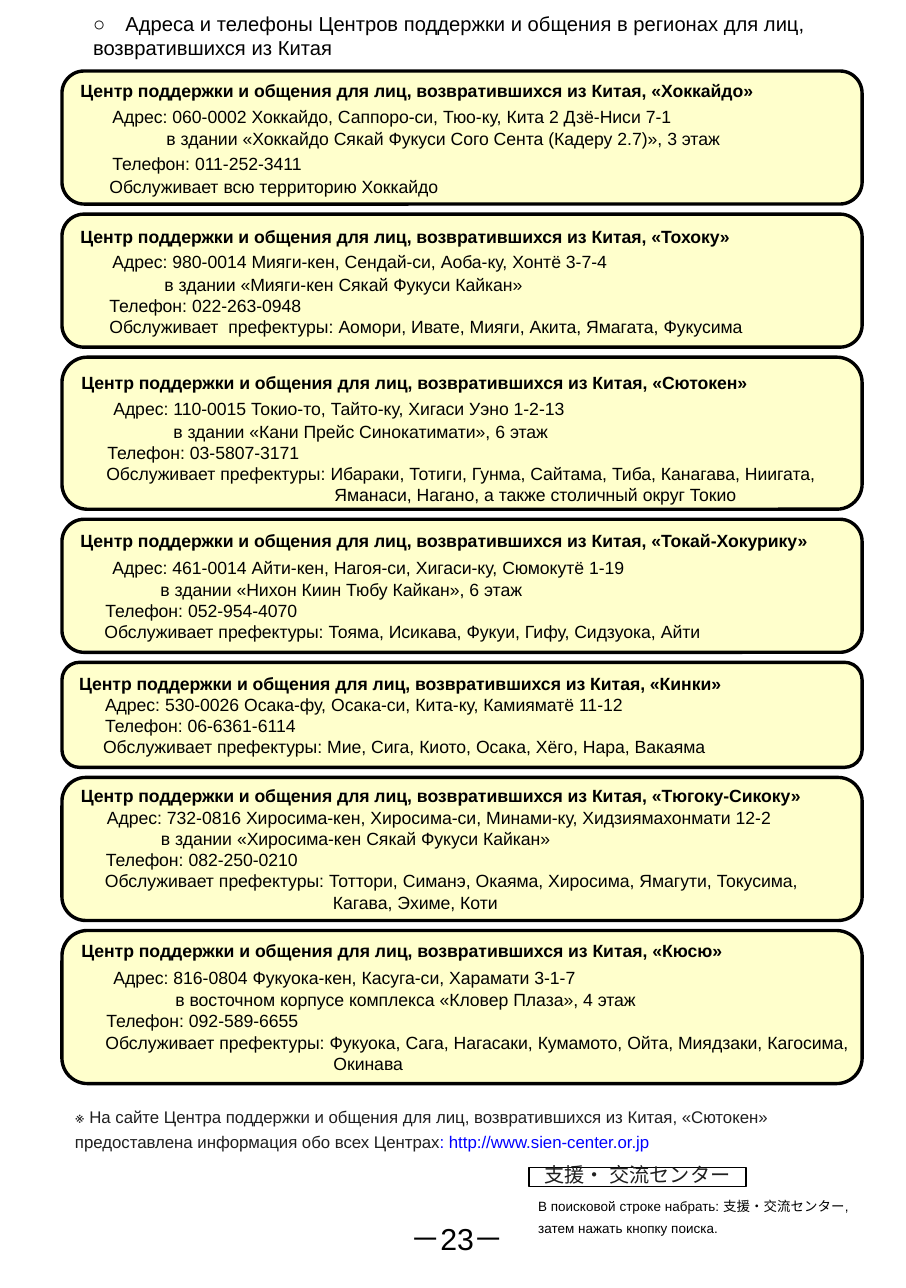
from lxml.etree import SubElement
from pptx import Presentation
from pptx.dml.color import RGBColor
from pptx.enum.shapes import MSO_SHAPE
from pptx.enum.text import MSO_ANCHOR, PP_ALIGN
from pptx.oxml.ns import qn
from pptx.util import Emu, Inches, Pt

# Content
HEADING = "○\u3000Адреса и телефоны Центров поддержки и общения в регионах для лиц, возвратившихся из Китая"
CENTER_TITLE = "Центр поддержки и общения для лиц, возвратившихся из Китая, «{}»"
# name, box height, top margin, lines as (indent, space before, text)
CENTERS = [
    ("Хоккайдо", 133, 1, [
        (32, 5, "Адрес: 060-0002 Хоккайдо, Саппоро-си, Тюо-ку, Кита 2 Дзё-Ниси 7-1"),
        (86, 1, "в здании «Хоккайдо Сякай Фукуси Сого Сента (Кадеру 2.7)», 3 этаж"),
        (32, 4, "Телефон: 011-252-3411"),
        (29, 1, "Обслуживает всю территорию Хоккайдо"),
    ]),
    ("Тохоку", 133, 2, [
        (32, 4, "Адрес: 980-0014 Мияги-кен, Сендай-си, Аоба-ку, Хонтё 3-7-4"),
        (84, 1, "в здании «Мияги-кен Сякай Фукуси Кайкан»"),
        (29, 0, "Телефон: 022-263-0948"),
        (29, 0, "Обслуживает  префектуры: Аомори, Ивате, Мияги, Акита, Ямагата, Фукусима"),
    ]),
    ("Сютокен", 152, 11, [
        (32, 5, "Адрес: 110-0015 Токио-то, Тайто-ку, Хигаси Уэно 1-2-13"),
        (92, 1, "в здании «Кани Прейс Синокатимати», 6 этаж"),
        (26, 0, "Телефон: 03-5807-3171"),
        (25, 0, "Обслуживает префектуры: Ибараки, Тотиги, Гунма, Сайтама, Тиба, Канагава, Ниигата,"),
        (253, 0, "Яманаси, Нагано, а также столичный округ Токио"),
    ]),
    ("Токай-Хокурику", 133, 1, [
        (32, 5, "Адрес: 461-0014 Айти-кен, Нагоя-си, Хигаси-ку, Сюмокутё 1-19"),
        (80, 1, "в здании «Нихон Киин Тюбу Кайкан», 6 этаж"),
        (25, 0, "Телефон: 052-954-4070"),
        (24, 0, "Обслуживает префектуры: Тояма, Исикава, Фукуи, Гифу, Сидзуока, Айти"),
    ]),
    ("Кинки", 105, 0, [
        (26, 0, "Адрес: 530-0026 Осака-фу, Осака-си, Кита-ку, Камияматё 11-12"),
        (26, 0, "Телефон: 06-6361-6114"),
        (24, 0, "Обслуживает префектуры: Мие, Сига, Киото, Осака, Хёго, Нара, Вакаяма"),
    ]),
    ("Тюгоку-Сикоку", 143, 0, [
        (26, 0, "Адрес: 732-0816 Хиросима-кен, Хиросима-си, Минами-ку, Хидзиямахонмати 12-2"),
        (80, 0, "в здании «Хиросима-кен Сякай Фукуси Кайкан»"),
        (25, 0, "Телефон: 082-250-0210"),
        (24, 0, "Обслуживает префектуры: Тоттори, Симанэ, Окаяма, Хиросима, Ямагути, Токусима,"),
        (252, 0, "Кагава, Эхиме, Коти"),
    ]),
    ("Кюсю", 153, 0, [
        (32, 5, "Адрес: 816-0804 Фукуока-кен, Касуга-си, Харамати 3-1-7"),
        (94, 1, "в восточном корпусе комплекса «Кловер Плаза», 4 этаж"),
        (25, 0, "Телефон: 092-589-6655"),
        (24, 0, "Обслуживает префектуры: Фукуока, Сага, Нагасаки, Кумамото, Ойта, Миядзаки, Кагосима,"),
        (252, 0, "Окинава"),
    ]),
]
SITE_NOTE = ("※ На сайте Центра поддержки и общения для лиц, возвратившихся из Китая, "
             "«Сютокен» предоставлена информация обо всех Центрах")
SITE_ADDRESS = ": http://www.sien-center.or.jp"
SEARCH_WORDS = "支援・ 交流センター"
SEARCH_HINT = ["В поисковой строке набрать: 支援・交流センター,", "затем нажать кнопку поиска."]
PAGE_NUMBER = "－23－"

CENTERS_LEFT, CENTERS_TOP, CENTERS_WIDTH, CENTERS_GAP = 62, 71, 800, 10


def px(value):
    return Emu(round(value * 914400 / 121.1))


def color(value):
    return RGBColor.from_string(value)


def add_text(para, text, size=10.5, bold=False, ink="000000", font="Arial",
             indent=0, before=0, spacing=None, align=PP_ALIGN.LEFT):
    para.alignment = align
    para.space_before = px(before)
    if spacing:
        para.line_spacing = Pt(spacing)
    if indent:
        para._p.get_or_add_pPr().set("marL", str(px(indent)))
    span = para.add_run()
    span.text = text
    span.font.size = Pt(size)
    span.font.bold = bold
    span.font.name = font
    span.font.color.rgb = color(ink)
    SubElement(span.font._element, qn("a:ea"), typeface=font)


def set_frame(box, margins, anchor=MSO_ANCHOR.TOP, wrap=True):
    frame = box.text_frame
    frame.word_wrap = wrap
    frame.vertical_anchor = anchor
    (frame.margin_left, frame.margin_top,
     frame.margin_right, frame.margin_bottom) = [px(margin) for margin in margins]
    return frame


def add_box(page, place, margins=(12, 6, 12, 6), **layout):
    return set_frame(page.shapes.add_textbox(*map(px, place)), margins, **layout)


def add_panel(page, kind, place, line_width, margins, fill=None, **layout):
    panel = page.shapes.add_shape(kind, *map(px, place))
    panel.shadow.inherit = False
    if fill:
        panel.fill.solid()
        panel.fill.fore_color.rgb = color(fill)
    else:
        panel.fill.background()
    panel.line.color.rgb = color("000000")
    panel.line.width = Pt(line_width)
    return set_frame(panel, margins, **layout)


def main():
    deck = Presentation()
    deck.slide_width, deck.slide_height = Inches(7.48), Inches(10.63)
    page = deck.slides.add_slide(deck.slide_layouts[6])

    # Heading
    frame = add_box(page, (81, 5, 773, 61), anchor=MSO_ANCHOR.MIDDLE)
    add_text(frame.paragraphs[0], HEADING, size=12)

    # Stack of regional centers
    top = CENTERS_TOP
    for name, height, top_margin, lines in CENTERS:
        frame = add_panel(page, MSO_SHAPE.ROUNDED_RECTANGLE,
                          (CENTERS_LEFT, top, CENTERS_WIDTH, height), 2,
                          (12, top_margin, 0, 0), fill="FFFFCC", anchor=MSO_ANCHOR.MIDDLE)
        add_text(frame.paragraphs[0], CENTER_TITLE.format(name), bold=True, spacing=12.65)
        for indent, before, text in lines:
            add_text(frame.add_paragraph(), text, indent=indent, before=before, spacing=12.65)
        top += height + CENTERS_GAP

    # Web site note
    frame = add_box(page, (75, 1101, 807, 65), margins=(0, 0, 0, 0))
    add_text(frame.paragraphs[0], SITE_NOTE, size=10, ink="1F1F1F", spacing=14.9)
    add_text(frame.paragraphs[0], SITE_ADDRESS, size=10, ink="0000FF", spacing=14.9)

    # Search field and hint
    frame = add_panel(page, MSO_SHAPE.RECTANGLE, (529, 1167, 217, 19), 0.75, (0, 0, 0, 0))
    add_text(frame.paragraphs[0], SEARCH_WORDS, size=12, ink="202020",
             font="Noto Sans CJK JP", spacing=11.5, align=PP_ALIGN.CENTER)
    frame = add_box(page, (526, 1191, 338, 53), wrap=False)
    add_text(frame.paragraphs[0], SEARCH_HINT[0], size=8)
    add_text(frame.add_paragraph(), SEARCH_HINT[1], size=8, before=6)

    # Page number
    frame = add_box(page, (367, 1214, 180, 48))
    add_text(frame.paragraphs[0], PAGE_NUMBER, size=18, align=PP_ALIGN.CENTER)

    deck.save("out.pptx")


if __name__ == "__main__":
    main()
